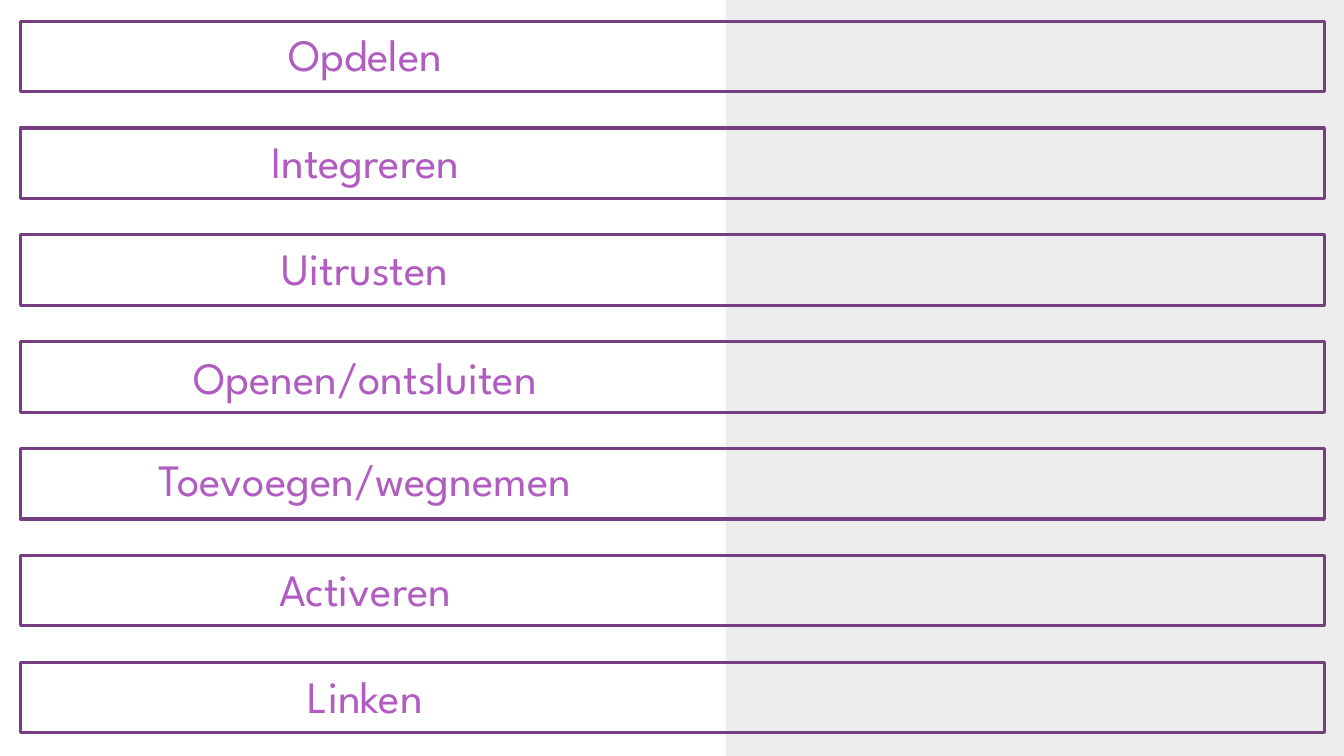
from pptx import Presentation
from pptx.dml.color import RGBColor
from pptx.enum.shapes import MSO_SHAPE as SHAPE
from pptx.enum.text import MSO_ANCHOR as ANCHOR, PP_ALIGN as ALIGN
from pptx.util import Pt

W, H = 960, 540
ROWS = [
    ("Opdelen", 199, -2),
    ("Integreren", 199, -2),
    ("Uitrusten", 199, -2),
    ("Openen/ontsluiten", 361, 0),
    ("Toevoegen/wegnemen", 450, -3.5),
    ("Activeren", 199, -1.5),
    ("Linken", 199, -1.5),
]
ROW_H, PITCH, LABEL_H = 50.4, 76.32, 47.5


def rgb(color):
    return RGBColor.from_string(color)


def add_rect(s, x, y, w, h, fill=None, line=None):
    sp = s.shapes.add_shape(SHAPE.RECTANGLE, Pt(x), Pt(y), Pt(w), Pt(h))
    sp.shadow.inherit = False
    if fill:
        sp.fill.solid()
        sp.fill.fore_color.rgb = rgb(fill)
    else:
        sp.fill.background()
    if line:
        sp.line.color.rgb = rgb(line)
        sp.line.width = Pt(2.25)
    else:
        sp.line.fill.background()


def add_text(s, text, x, y, w, h, size=32, color="B05CC0", font="League Spartan"):
    tf = s.shapes.add_textbox(Pt(x), Pt(y), Pt(w), Pt(h)).text_frame
    tf.word_wrap = True
    tf.vertical_anchor = ANCHOR.MIDDLE
    p = tf.paragraphs[0]
    p.alignment = ALIGN.CENTER
    r = p.add_run()
    r.text = text
    r.font.size = Pt(size)
    r.font.name = font
    r.font.color.rgb = rgb(color)


def add_row(s, x, y, w, h, text, label_w, nudge):
    add_rect(s, x, y, w, h, line="764080")
    label_x = x + 246.5 - label_w / 2
    label_y = y + (h - LABEL_H) / 2 + nudge
    add_text(s, text, label_x, label_y, label_w, LABEL_H)


def add_rows(s, x, y, w):
    for i, (text, label_w, nudge) in enumerate(ROWS):
        add_row(s, x, y + i * PITCH, w, ROW_H, text, label_w, nudge)


def main():
    prs = Presentation()
    prs.slide_width, prs.slide_height = Pt(W), Pt(H)
    s = prs.slides.add_slide(prs.slide_layouts[6])
    s.background.fill.solid()
    s.background.fill.fore_color.rgb = rgb("FFFFFF")
    add_rect(s, 518.4, 0, W - 518.4, H, fill="EEEDED")
    add_rows(s, 14.4, 15.12, 931.7)
    prs.save("out.pptx")


if __name__ == "__main__":
    main()
